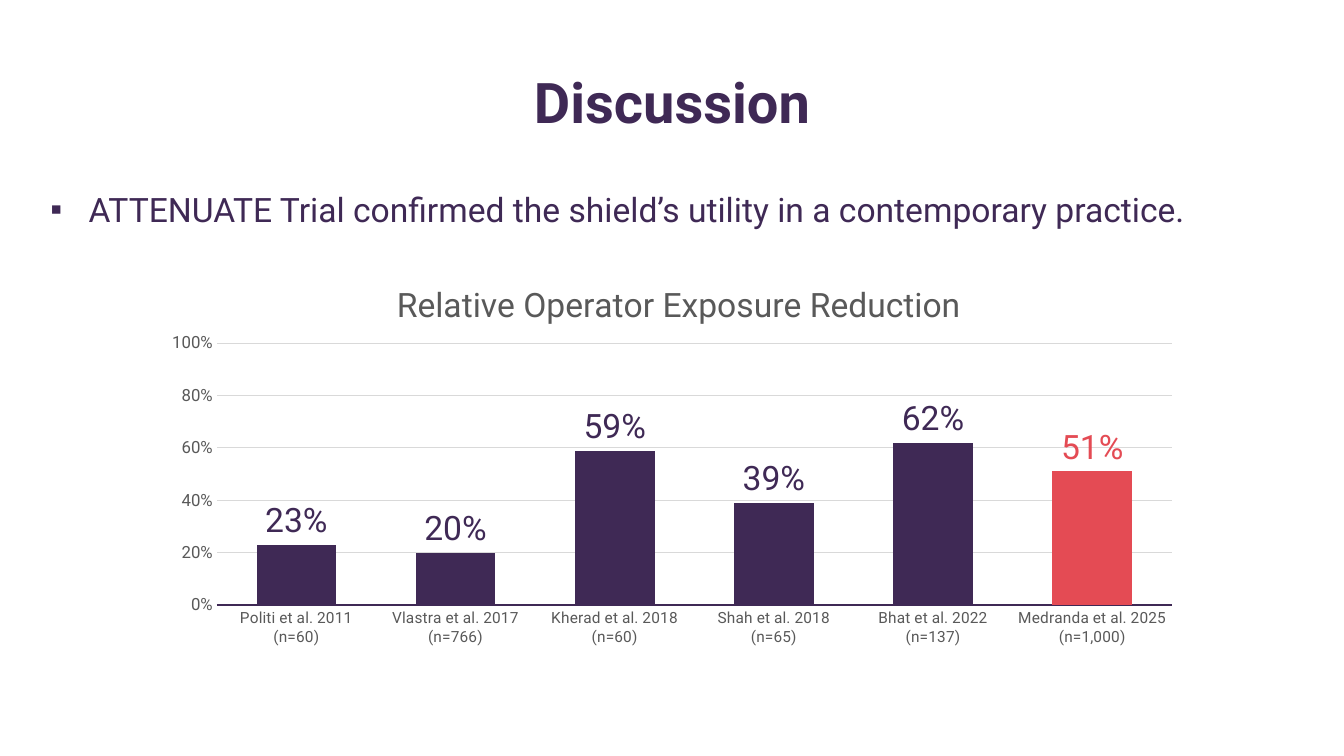
from lxml import etree
from pptx import Presentation
from pptx import util as u
from pptx.chart.data import CategoryChartData
from pptx.dml.color import RGBColor
from pptx.enum import chart as kinds, text
from pptx.oxml import parse_xml
from pptx.oxml.ns import nsdecls, qn

WIDTH, HEIGHT = 13.33, 7.5
FONT = "Roboto"
PLUM, RED, GRAY, GRID = "3F2955", "E44B54", "595959", "D9D9D9"
STUDIES = {
    "Politi et al. 2011 (n=60)": 0.23,
    "Vlastra et al. 2017 (n=766)": 0.20,
    "Kherad et al. 2018 (n=60)": 0.59,
    "Shah et al. 2018 (n=65)": 0.39,
    "Bhat et al. 2022 (n=137)": 0.62,
    "Medranda et al. 2025 (n=1,000)": 0.51,
}


def color(value):
    """Turn a hex string into a colour."""
    return RGBColor.from_string(value)


def style(font, size, value, bold=False):
    """Set the face, size, colour and weight of a font."""
    font.name, font.size, font.bold = FONT, u.Pt(size), bold
    font.color.rgb = color(value)


def paint(target, value):
    """Fill a chart element with a solid colour."""
    target.format.fill.solid()
    target.format.fill.fore_color.rgb = color(value)


def add_text(page, area, words, size, align=None, anchor=text.MSO_ANCHOR.TOP,
             insets=(0.1, 0.05, 0.1, 0.05), bold=False, spacing=None, bullet=None, indent=0):
    """Place one formatted paragraph in a text box."""
    box = page.shapes.add_textbox(*map(u.Inches, area))
    frame = box.text_frame
    frame.word_wrap, frame.vertical_anchor = True, anchor
    frame.margin_left, frame.margin_top, frame.margin_right, frame.margin_bottom = map(u.Inches, insets)
    para = frame.paragraphs[0]
    para.alignment, para.line_spacing = align, spacing
    if bullet:
        props = para._p.get_or_add_pPr()
        props.set("marL", str(u.Inches(indent)))
        props.set("indent", str(-u.Inches(indent)))
        etree.SubElement(props, qn("a:buFont"), typeface="Arial")
        etree.SubElement(props, qn("a:buChar"), char=bullet)
    span = para.add_run()
    span.text = words
    style(span.font, size, PLUM, bold)


def set_layout(element, target=None, **shares):
    """Fix a chart part at shares of the chart's size."""
    for old in element.findall(qn("c:layout")):
        element.remove(old)
    inner = f'<c:layoutTarget val="{target}"/>' if target else ""
    modes = "".join(f'<c:{side}Mode val="edge"/>' for side in "xy")
    sizes = "".join(f'<c:{name} val="{share}"/>' for name, share in shares.items())
    layout = parse_xml(f'<c:layout {nsdecls("c")}><c:manualLayout>{inner}{modes}{sizes}'
                       '</c:manualLayout></c:layout>')
    heading = element.find(qn("c:tx"))
    element.insert(0 if heading is None else 1, layout)


def style_axes(chart):
    """Format the category and value axes."""
    studies, percent = chart.category_axis, chart.value_axis
    for axis, size in ((studies, 11), (percent, 12)):
        axis.major_tick_mark = axis.minor_tick_mark = kinds.XL_TICK_MARK.NONE
        style(axis.tick_labels.font, size, GRAY)
    studies.format.line.color.rgb = color(PLUM)
    studies.format.line.width = u.Pt(1)
    percent.format.line.fill.background()
    percent.minimum_scale, percent.maximum_scale, percent.major_unit = 0, 1, 0.2
    percent.tick_labels.number_format = "0%"
    percent.tick_labels.number_format_is_linked = False
    grid = percent.major_gridlines.format.line
    grid.color.rgb, grid.width = color(GRID), u.Pt(0.75)


def add_reduction_chart(page, area):
    """Draw exposure reduction by study, with the last study highlighted."""
    data = CategoryChartData(number_format="0%")
    data.categories = list(STUDIES)
    data.add_series("Series 1", list(STUDIES.values()))
    chart = page.shapes.add_chart(kinds.XL_CHART_TYPE.COLUMN_CLUSTERED,
                                  *map(u.Inches, area), data).chart
    style(chart.font, 10, "000000")
    chart.has_legend, chart.has_title = False, True
    para = chart.chart_title.text_frame.paragraphs[0]
    span = para.add_run()
    span.text = "Relative Operator Exposure Reduction"
    style(span.font, 24, GRAY)
    chart.chart_title.include_in_layout = False
    style_axes(chart)

    plot = chart.plots[0]
    plot.gap_width, plot.overlap, plot.vary_by_categories = 100, -12, False
    series = plot.series[0]
    paint(series, PLUM)
    labels = series.data_labels
    labels.show_value, labels.number_format = True, "0%"
    labels.number_format_is_linked = False
    labels.position = kinds.XL_LABEL_POSITION.OUTSIDE_END
    style(labels.font, 24, PLUM)
    latest = series.points[len(STUDIES) - 1]
    paint(latest, RED)
    style(latest.data_label.font, 24, RED)
    latest.data_label.position = kinds.XL_LABEL_POSITION.OUTSIDE_END

    set_layout(chart.chart_title._element, x=0.23, y=0.06)
    set_layout(chart._chartSpace.chart.plotArea, "inner", x=0.063, y=0.226, w=0.917, h=0.65)


def add_discussion(deck):
    """Build the discussion slide."""
    page = deck.slides.add_slide(deck.slide_layouts[6])
    add_text(page, (0, 0.5, WIDTH, 1), "Discussion", 40, bold=True,
             align=text.PP_ALIGN.CENTER, anchor=text.MSO_ANCHOR.MIDDLE)
    add_text(page, (0, 1.5, WIDTH, 5),
             "ATTENUATE Trial confirmed the shield’s utility in a contemporary practice.",
             24, insets=(0.5, 0.25, 0.5, 0.5), spacing=1.5, bullet="▪", indent=0.38)
    add_reduction_chart(page, (1.5, 2.5, WIDTH - 3, 4))


def main():
    """Create and save the deck."""
    deck = Presentation()
    deck.slide_width, deck.slide_height = u.Inches(WIDTH), u.Inches(HEIGHT)
    add_discussion(deck)
    deck.save("out.pptx")


if __name__ == "__main__":
    main()
